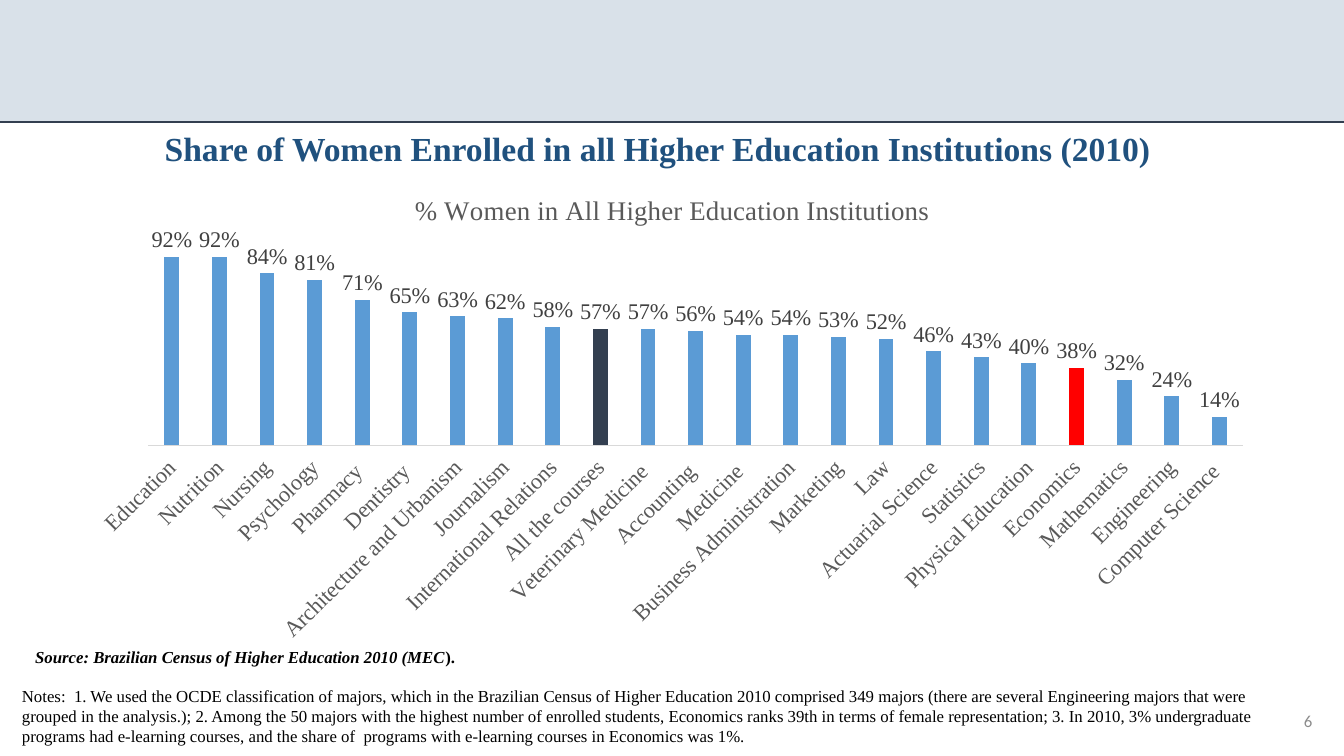
from dataclasses import dataclass

from lxml.etree import SubElement
from pptx import Presentation
from pptx.chart.data import CategoryChartData
from pptx.dml.color import RGBColor as Rgb
from pptx.enum.chart import XL_CHART_TYPE as ChartType, XL_LABEL_POSITION as LabelPos
from pptx.enum.chart import XL_TICK_LABEL_POSITION as TickLabelPos, XL_TICK_MARK as Tick
from pptx.enum.shapes import MSO_CONNECTOR as Connector, MSO_SHAPE as Shape
from pptx.enum.text import MSO_ANCHOR as Anchor, PP_ALIGN as Align
from pptx.oxml.ns import qn
from pptx.util import Pt

HEADING = "Share of Women Enrolled in all Higher Education Institutions (2010)"
CHART_TITLE = "% Women in All Higher Education Institutions"
SOURCE = ("Source: Brazilian Census of Higher Education 2010 (MEC", ").")
NOTES = (
    "Notes:  1. We used the OCDE classification of majors, which in the Brazilian Census of "
    "Higher Education 2010 comprised 349 majors (there are several Engineering majors that were "
    "grouped in the analysis.); 2. Among the 50 majors with the highest number of enrolled "
    "students, Economics ranks 39th in terms of female representation; 3. In 2010, 3% "
    "undergraduate programs had e-learning courses, and the share of  programs with e-learning "
    "courses in Economics was 1%."
)
PAGE_NUMBER = "6"
WOMEN_SHARE = {
    "Education": 0.92, "Nutrition": 0.92, "Nursing": 0.84, "Psychology": 0.81,
    "Pharmacy ": 0.71, "Dentistry ": 0.65, "Architecture and Urbanism": 0.63,
    "Journalism": 0.62, "International Relations": 0.58, "All the courses": 0.57,
    "Veterinary Medicine ": 0.57, "Accounting ": 0.56, "Medicine ": 0.54,
    "Business Administration": 0.54, "Marketing": 0.53, "Law": 0.52,
    "Actuarial Science": 0.46, "Statistics": 0.43, "Physical Education": 0.40,
    "Economics": 0.38, "Mathematics": 0.32, "Engineering": 0.24, "Computer Science ": 0.14,
}


@dataclass(frozen=True)
class Theme:
    serif: str = "Times New Roman"
    sans: str = "Calibri"
    brand: Rgb = Rgb(0x20, 0x51, 0x7E)
    navy: Rgb = Rgb(0x33, 0x3F, 0x50)
    bar: Rgb = Rgb(0x5B, 0x9B, 0xD5)
    accent: Rgb = Rgb(0xFF, 0, 0)
    black: Rgb = Rgb(0, 0, 0)
    label: Rgb = Rgb(0x40, 0x40, 0x40)
    axis_text: Rgb = Rgb(0x59, 0x59, 0x59)
    axis_line: Rgb = Rgb(0xD9, 0xD9, 0xD9)
    page: Rgb = Rgb(0x8C, 0x8C, 0x8C)
    heading_size: float = 24
    chart_title_size: float = 19.2
    chart_size: float = 16
    small_size: float = 12


THEME = Theme()
HIGHLIGHTS = {"All the courses": THEME.navy, "Economics": THEME.accent}
SLIDE_W, SLIDE_H = 960, 540
BAND_H = 87


def set_font(font, size, color, name=THEME.serif, bold=False, italic=False):
    font.name, font.size, font.bold, font.italic = name, Pt(size), bold, italic
    font.color.rgb = color


def add_text(slide, box, runs, align=Align.LEFT, anchor=Anchor.TOP, wrap=True):
    """Add one paragraph; each run is (text, font settings)."""
    frame = slide.shapes.add_textbox(*map(Pt, box)).text_frame
    frame.word_wrap, frame.vertical_anchor = wrap, anchor
    paragraph = frame.paragraphs[0]
    paragraph.alignment = align
    for text, settings in runs:
        run = paragraph.add_run()
        run.text = text
        set_font(run.font, **settings)


def add_band(slide):
    band = slide.shapes.add_shape(Shape.RECTANGLE, 0, 0, Pt(SLIDE_W), Pt(BAND_H))
    band.shadow.inherit = False
    band.line.fill.background()
    band.fill.solid()
    band.fill.fore_color.rgb = THEME.brand
    color = band._element.spPr.find(qn("a:solidFill"))[0]
    SubElement(color, qn("a:alpha"), val="17000")
    rule = slide.shapes.add_connector(Connector.STRAIGHT, 0, Pt(BAND_H), Pt(SLIDE_W), Pt(BAND_H))
    rule.line.color.rgb, rule.line.width = THEME.navy, Pt(1.5)
    SubElement(rule._element.spPr, qn("a:effectLst"))


def place(part, position, **fractions):
    """Fix a chart part at fractions of the chart; its layout is the child at position."""
    layout = part.find(qn("c:layout"))
    if layout is not None:
        part.remove(layout)
    layout = SubElement(part, qn("c:layout"))
    part.insert(position, layout)
    manual = SubElement(layout, qn("c:manualLayout"))
    if "w" in fractions:
        SubElement(manual, qn("c:layoutTarget"), val="inner")
    for side in "xy":
        SubElement(manual, qn(f"c:{side}Mode"), val="edge")
    for side, fraction in fractions.items():
        SubElement(manual, qn(f"c:{side}"), val=str(fraction))


def add_share_chart(slide):
    data = CategoryChartData(number_format="0%")
    data.categories = list(WOMEN_SHARE)
    data.add_series("Series 1", list(WOMEN_SHARE.values()))
    chart = slide.shapes.add_chart(
        ChartType.COLUMN_CLUSTERED, Pt(54.7), Pt(121), Pt(850.3), Pt(339.8), data).chart
    set_font(chart.font, THEME.chart_size, THEME.black)
    chart.has_legend = False

    chart.has_title = True
    title_run = chart.chart_title.text_frame.paragraphs[0].add_run()
    title_run.text = CHART_TITLE
    set_font(title_run.font, THEME.chart_title_size, THEME.axis_text)

    shares = chart.value_axis
    shares.minimum_scale, shares.maximum_scale = 0, 1
    shares.has_major_gridlines = False
    shares.tick_labels.number_format = "0%"
    shares.tick_labels.number_format_is_linked = False
    shares.visible = False

    majors = chart.category_axis
    majors.major_tick_mark = majors.minor_tick_mark = Tick.NONE
    majors.tick_label_position = TickLabelPos.LOW
    majors.format.line.color.rgb, majors.format.line.width = THEME.axis_line, Pt(0.75)
    set_font(majors.tick_labels.font, THEME.chart_size, THEME.axis_text)
    majors._element.find(qn("c:txPr")).find(qn("a:bodyPr")).set("rot", "-2700000")

    plot = chart.plots[0]
    plot.gap_width, plot.overlap, plot.vary_by_categories = 219, -27, False
    bars = plot.series[0]
    bars.invert_if_negative = False
    bars.format.fill.solid()
    bars.format.fill.fore_color.rgb = THEME.bar
    for index, major in enumerate(WOMEN_SHARE):
        if major in HIGHLIGHTS:
            fill = bars.points[index].format.fill
            fill.solid()
            fill.fore_color.rgb = HIGHLIGHTS[major]

    labels = bars.data_labels
    labels.show_value, labels.position = True, LabelPos.OUTSIDE_END
    labels.number_format, labels.number_format_is_linked = "0%", False
    set_font(labels.font, THEME.chart_size, THEME.label)

    root = chart._chartSpace.find(qn("c:chart"))
    place(root.find(qn("c:title")), 1, x=0.28, y=0.04)
    place(root.find(qn("c:plotArea")), 0, x=0.06, y=0.15, w=0.92, h=0.43)


def main():
    deck = Presentation()
    deck.slide_width, deck.slide_height = Pt(SLIDE_W), Pt(SLIDE_H)
    slide = deck.slides.add_slide(deck.slide_layouts[6])
    small = dict(size=THEME.small_size, color=THEME.black)
    add_band(slide)
    add_text(slide, (8.6, 87.8, 922.3, 36),
             [(HEADING, dict(size=THEME.heading_size, color=THEME.brand, bold=True))], Align.CENTER)
    add_text(slide, (18, 458.6, 314.6, 21.6),
             [(SOURCE[0], dict(small, bold=True, italic=True)),
              (SOURCE[1], dict(small, bold=True))], wrap=False)
    add_text(slide, (728.6, 500.4, 216, 28.8),
             [(PAGE_NUMBER, dict(size=THEME.small_size, color=THEME.page, name=THEME.sans))],
             Align.RIGHT, Anchor.MIDDLE)
    add_text(slide, (8.6, 486, 909.4, 51.1), [(NOTES, small)])
    add_share_chart(slide)
    deck.save("out.pptx")


if __name__ == "__main__":
    main()
